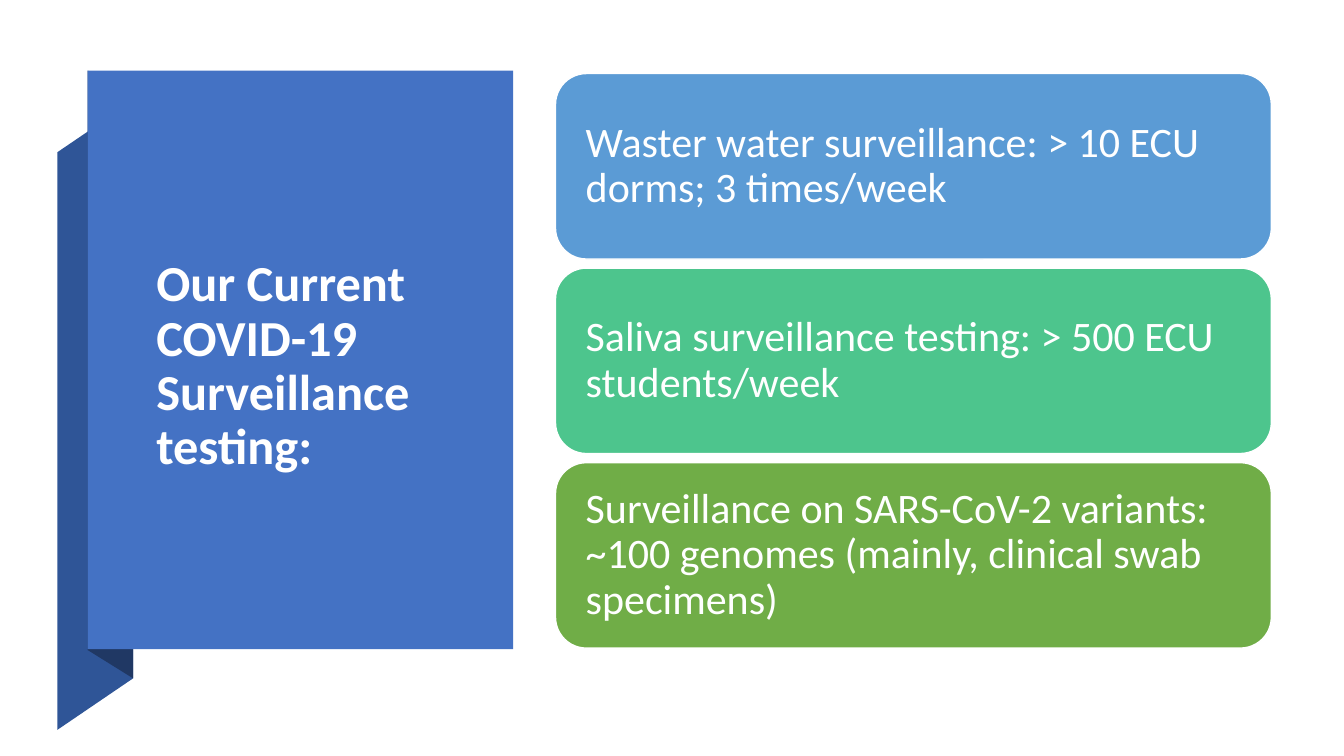
from dataclasses import dataclass

from pptx import Presentation
from pptx import util as u
from pptx.dml.color import RGBColor
from pptx.enum import shapes, text


@dataclass(frozen=True)
class Theme:
    """Colours, font and type sizes of the deck."""
    font: str = "Calibri"
    white: str = "FFFFFF"
    panel: str = "4472C4"
    ribbon: str = "2F5597"
    fold: str = "203864"
    cards: tuple = ("5B9BD5", "4DC58D", "70AD47")
    title_size: int = 36
    card_size: int = 30


THEME = Theme()
TITLE = "Our Current COVID-19 Surveillance testing:"
CARDS = (
    "Waster water surveillance: > 10 ECU dorms; 3 times/week",
    "Saliva surveillance testing: > 500 ECU students/week",
    "Surveillance on SARS-CoV-2 variants: ~100 genomes (mainly, clinical swab specimens)",
)


def set_attrs(target, values):
    """Set each named attribute on the target."""
    for name, value in values.items():
        setattr(target, name, value)


def paint(sp, colour, outline=None):
    """Give a shape a flat fill and an optional thin outline."""
    sp.shadow.inherit = False
    sp.fill.solid()
    sp.fill.fore_color.rgb = RGBColor.from_string(colour)
    if outline:
        sp.line.color.rgb = RGBColor.from_string(outline)
        sp.line.width = u.Pt(1)
    else:
        sp.line.fill.background()


def write(sp, content, size, bold, inset):
    """Write left-aligned white text, centred vertically in the shape."""
    tf = sp.text_frame
    set_attrs(tf, {
        "word_wrap": True,
        "auto_size": text.MSO_AUTO_SIZE.NONE,
        "vertical_anchor": text.MSO_ANCHOR.MIDDLE,
        "margin_left": u.Inches(inset),
        "margin_right": u.Inches(inset),
        "margin_top": u.Inches(0.05),
        "margin_bottom": u.Inches(0.05),
    })
    p = tf.paragraphs[0]
    set_attrs(p, {"alignment": text.PP_ALIGN.LEFT, "line_spacing": 0.9})
    r = p.add_run()
    r.text = content
    set_attrs(r.font, {"name": THEME.font, "size": u.Pt(size), "bold": bold})
    r.font.color.rgb = RGBColor.from_string(THEME.white)


def add_polygon(s, points, colour):
    """Draw a filled polygon through points given in inches."""
    corners = [(u.Inches(x), u.Inches(y)) for x, y in points]
    builder = s.shapes.build_freeform(*corners[0])
    builder.add_line_segments(corners[1:])
    paint(builder.convert_to_shape(), colour)


def add_title_panel(s, left, top, width, height):
    """Place the title on a panel with a ribbon folded behind it."""
    outer, inner = left - 0.3, left + 0.45
    bottom = top + height
    add_polygon(s, [(outer, top + 0.81), (inner, top + 0.3),
                    (inner, bottom + 0.29), (outer, bottom + 0.8)], THEME.ribbon)
    add_polygon(s, [(left, top), (inner, top + 0.29),
                    (inner, bottom + 0.29), (left, bottom + 0.01)], THEME.fold)
    panel = s.shapes.add_shape(shapes.MSO_SHAPE.RECTANGLE, *map(u.Inches, (left, top, width, height)))
    paint(panel, THEME.panel)
    title = s.shapes.title
    set_attrs(title, {
        "left": u.Inches(left + 0.58),
        "top": u.Inches(top + 0.97),
        "width": u.Inches(3.01),
        "height": u.Inches(3.94),
    })
    write(title, TITLE, THEME.title_size, True, 0.1)
    title.element.getparent().append(title.element)


def add_cards(s, left, top, width, height, gap=0.09):
    """Stack equal rounded cards to fill the box."""
    card_height = (height - gap * (len(CARDS) - 1)) / len(CARDS)
    for i, (content, colour) in enumerate(zip(CARDS, THEME.cards)):
        y = top + i * (card_height + gap)
        card = s.shapes.add_shape(shapes.MSO_SHAPE.ROUNDED_RECTANGLE,
                                  *map(u.Inches, (left, y, width, card_height)))
        paint(card, colour, THEME.white)
        write(card, content, THEME.card_size, False, 0.21)


def main():
    """Build the slide and save the deck."""
    prs = Presentation()
    set_attrs(prs, {"slide_width": u.Inches(13.33), "slide_height": u.Inches(7.5)})
    s = prs.slides.add_slide(prs.slide_layouts[5])
    add_title_panel(s, 0.87, 0.7, 4.22, 5.74)
    add_cards(s, 5.51, 0.73, 7.1, 5.7)
    prs.save("out.pptx")


if __name__ == "__main__":
    main()
